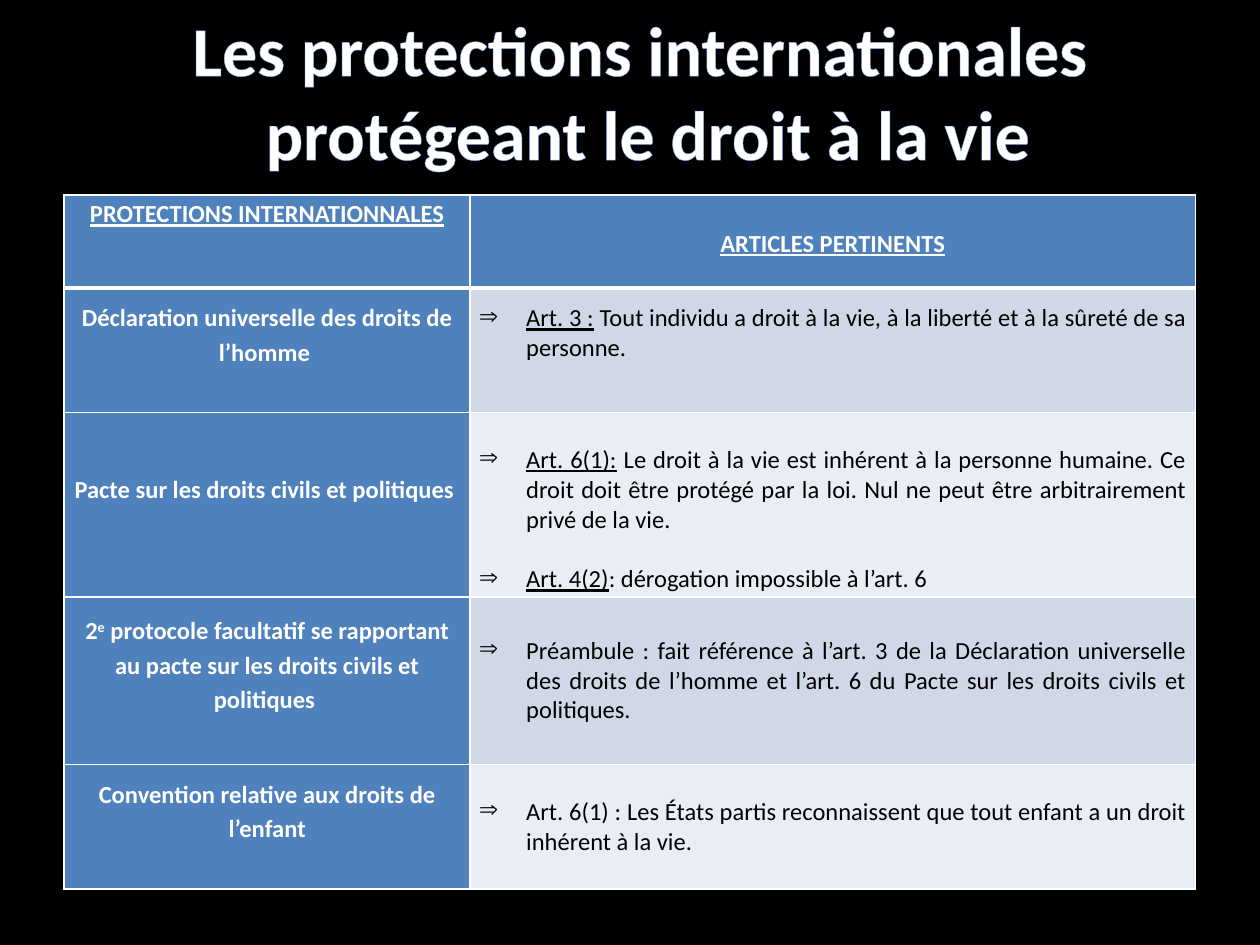
from lxml.etree import SubElement
from pptx import Presentation
from pptx.dml.color import RGBColor
from pptx.enum.text import MSO_ANCHOR as Anchor, PP_ALIGN as Align
from pptx.oxml.ns import qn
from pptx.util import Pt

BLACK = RGBColor(0x00, 0x00, 0x00)
WHITE = RGBColor(0xFF, 0xFF, 0xFF)
BLUE = RGBColor(0x4F, 0x81, 0xBD)
PALE_BLUE = RGBColor(0xD0, 0xD8, 0xE8)
PALE_GREY = RGBColor(0xE9, 0xED, 0xF4)
GLOW_BLUE = RGBColor(0x7E, 0xA6, 0xEA)

HEADINGS = ["PROTECTIONS INTERNATIONNALES", "ARTICLES PERTINENTS"]
LINE, LOOSE_LINE = 17, 19.6
PROTECTIONS = [
    ([("Déclaration universelle des droits de l’homme ", {})],
     [[("Art. 3 :", {"underline": True}),
       (" Tout individu a droit à la vie, à la liberté et à la sûreté de sa personne.", {})]],
     0, LOOSE_LINE),
    ([("Pacte sur les droits civils et politiques ", {})],
     [[("Art. 6(1):", {"underline": True}),
       (" Le droit à la vie est inhérent à la personne humaine. Ce droit doit être protégé "
        "par la loi. Nul ne peut être arbitrairement privé de la vie.", {})],
      [("Art. 4(2)", {"underline": True}),
       (": dérogation impossible à l’art. 6", {})]],
     LINE, 0),
    ([("2", {}), ("e", {"baseline": 30000}),
      (" protocole facultatif se rapportant au pacte sur les droits civils et politiques ", {})],
     [[("Préambule : fait référence à l’art. 3 de la Déclaration universelle des droits de "
        "l’homme et l’art. 6 du Pacte sur les droits civils et politiques. ", {})]],
     0, 0),
    ([("Convention relative aux droits de l’enfant", {})],
     [[("Art. 6(1) : Les États partis reconnaissent que tout enfant a un droit inhérent "
        "à la vie. ", {})]],
     0, 0),
]


class SlideBuilder:
    """Hold the slide and its style, and add each kind of element."""

    font_name = "Calibri"
    body_size = 14
    indent = 27
    side_margin = 5

    def __init__(self, slide):
        self.slide = slide
        slide.background.fill.solid()
        slide.background.fill.fore_color.rgb = BLACK

    def solid_line(self, parent, tag, color, width):
        line = SubElement(parent, qn(tag), w=str(int(Pt(width))))
        fill = SubElement(line, qn("a:solidFill"))
        SubElement(fill, qn("a:srgbClr"), val=str(color))

    def add_runs(self, paragraph, runs, color, size=body_size, layout=None, **font_style):
        for name, value in (layout or {}).items():
            setattr(paragraph, name, value)
        for text, extra in runs:
            run = paragraph.add_run()
            run.text = text
            style = {"name": self.font_name, "size": Pt(size), **font_style, **extra}
            baseline = style.pop("baseline", None)
            for name, value in style.items():
                setattr(run.font, name, value)
            run.font.color.rgb = color
            if baseline:
                run._r.get_or_add_rPr().set("baseline", str(baseline))

    def title(self, lines, left, top, width, height):
        frame = self.slide.shapes.add_textbox(Pt(left), Pt(top), Pt(width), Pt(height)).text_frame
        frame.word_wrap = True
        for index, line in enumerate(lines):
            paragraph = frame.add_paragraph() if index else frame.paragraphs[0]
            self.add_runs(paragraph, [(line, {})], WHITE, 40,
                          {"alignment": Align.CENTER}, bold=True)
            properties = paragraph.runs[0]._r.get_or_add_rPr()
            self.solid_line(properties, "a:ln", GLOW_BLUE, 2.48)
            properties.insert(0, properties[-1])

    def table(self, left, top, widths, heights):
        table = self.slide.shapes.add_table(
            len(heights), len(widths), Pt(left), Pt(top),
            Pt(sum(widths)), Pt(sum(heights))).table
        table.horz_banding = False
        for column, width in zip(table.columns, widths):
            column.width = Pt(width)
        for row, height in zip(table.rows, heights):
            row.height = Pt(height)
        return table

    def cell(self, cell, fill, borders, anchor=Anchor.MIDDLE, above=0, below=0):
        margins = {"margin_left": self.side_margin, "margin_right": self.side_margin,
                   "margin_top": above, "margin_bottom": below}
        for name, value in margins.items():
            setattr(cell, name, Pt(value))
        cell.vertical_anchor = anchor
        for side, width in borders.items():
            self.solid_line(cell._tc.get_or_add_tcPr(), f"a:ln{side}", WHITE, width)
        cell.fill.solid()
        cell.fill.fore_color.rgb = fill
        return cell.text_frame

    def label(self, frame, runs, **font_style):
        self.add_runs(frame.paragraphs[0], runs, WHITE, bold=True,
                      layout={"alignment": Align.CENTER, "line_spacing": 1.15}, **font_style)

    def articles(self, frame, articles):
        for index, runs in enumerate(articles):
            paragraph = frame.add_paragraph() if index else frame.paragraphs[0]
            self.add_runs(paragraph, runs, BLACK, bold=False,
                          layout={"alignment": Align.JUSTIFY,
                                  "space_before": Pt(LINE if index else 0)})
            properties = paragraph._p.get_or_add_pPr()
            properties.set("marL", str(int(Pt(self.indent))))
            properties.set("indent", str(int(Pt(-self.indent))))
            SubElement(properties, qn("a:buChar"), char="⇒")


def main():
    deck = Presentation()
    deck.slide_width, deck.slide_height = Pt(720), Pt(540)
    builder = SlideBuilder(deck.slides.add_slide(deck.slide_layouts[6]))
    builder.title(["Les protections internationales ", "protégeant le droit à la vie"],
                  -4.5, 0, 749.5, 104.5)

    table = builder.table(36.7, 111.5, [232, 414.4], [53.2, 71.2, 105.3, 95.7, 71.2])
    inner_sides = [{"R": 1}, {"L": 1}]
    for column, heading in enumerate(HEADINGS):
        anchor = Anchor.MIDDLE if column else Anchor.TOP
        frame = builder.cell(table.cell(0, column), BLUE,
                             {**inner_sides[column], "B": 3}, anchor)
        builder.label(frame, [(heading, {})], underline=True)

    for row, (name, articles, above, below) in enumerate(PROTECTIONS, 1):
        edges = {"T": 3 if row == 1 else 1}
        if row < len(PROTECTIONS):
            edges["B"] = 1
        band = PALE_BLUE if row % 2 else PALE_GREY
        builder.label(builder.cell(table.cell(row, 0), BLUE, {**inner_sides[0], **edges},
                                   below=LOOSE_LINE), name)
        builder.articles(builder.cell(table.cell(row, 1), band, {**inner_sides[1], **edges},
                                      above=above, below=below), articles)
    deck.save("out.pptx")


if __name__ == "__main__":
    main()
